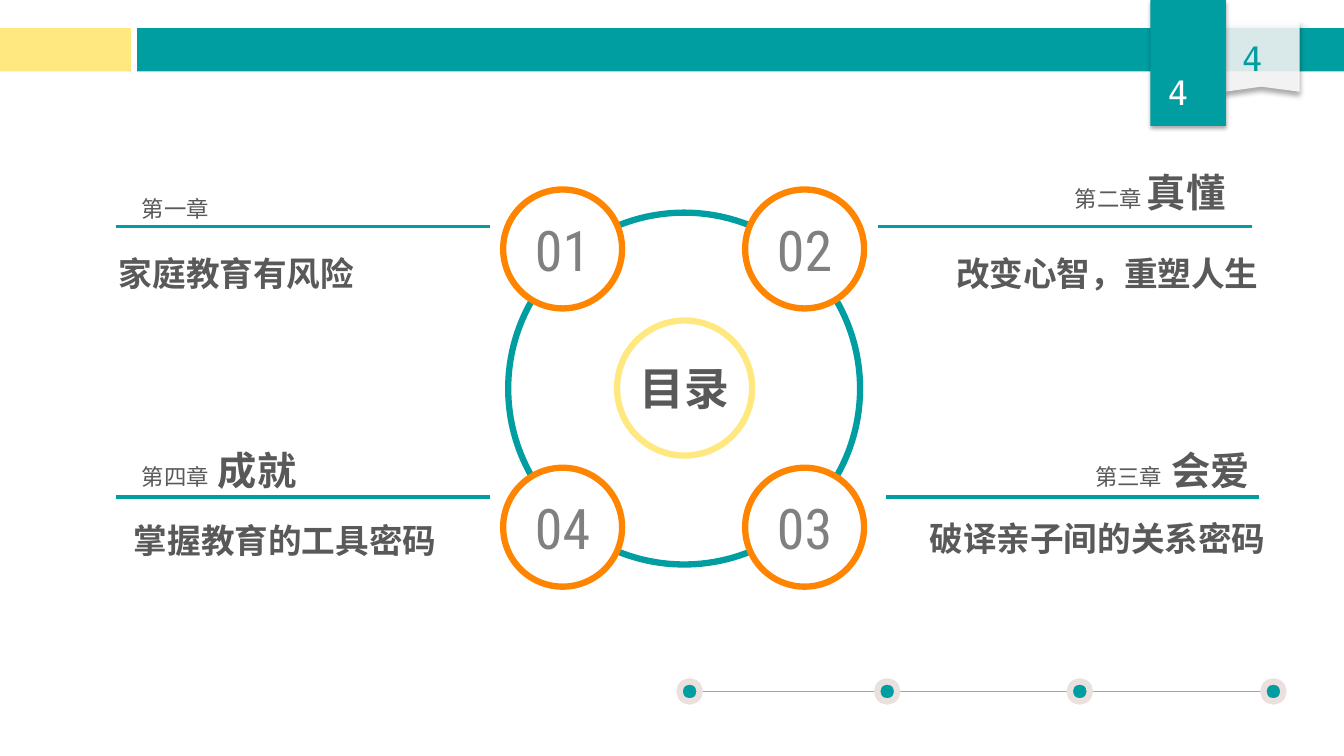
from dataclasses import dataclass
from typing import Optional

from lxml.etree import SubElement
from pptx import Presentation
from pptx.dml.color import RGBColor
from pptx.enum.shapes import MSO_CONNECTOR, MSO_SHAPE
from pptx.enum.text import MSO_ANCHOR, MSO_AUTO_SIZE, PP_ALIGN
from pptx.oxml.ns import qn
from pptx.util import Inches, Pt

TEAL, YELLOW, ORANGE = "009EA1", "FFE880", "FF8500"
WHITE, DARK, GREY = "FFFFFF", "595959", "808080"
CJK, HEADING, DIGITS, MONO = (
    "Noto Sans CJK JP", "Noto Sans CJK SC", "Roboto Condensed", "DejaVu Sans Mono")

Box = tuple[float, float, float, float]


@dataclass
class Run:
    text: str
    size: float
    font: str
    color: str
    bold: bool = False


@dataclass
class Shadow:
    alpha: int
    blur: float
    distance: float


@dataclass
class Chapter:
    number: str
    badge: tuple[float, float]
    rule: tuple[float, float, float]  # left, right, y
    label: str
    title: str
    label_box: Box
    summary: str
    summary_box: Box
    align: PP_ALIGN


LEFT, RIGHT = PP_ALIGN.LEFT, PP_ALIGN.RIGHT
CHAPTERS = [
    Chapter("01", (4.99, 1.88), (1.15, 4.86, 2.25), "第一章", "", (1.31, 1.88, 3.54, 0.37),
            "家庭教育有风险", (1.08, 2.46, 4.25, 0.5), LEFT),
    Chapter("02", (7.39, 1.88), (8.71, 12.42, 2.25), "第二章 ", "真懂", (8.71, 1.62, 3.54, 0.57),
            "改变心智，重塑人生", (8.56, 2.46, 4.02, 0.5), RIGHT),
    Chapter("03", (7.39, 4.64), (8.79, 12.49, 4.93), "第三章", " 会爱", (8.95, 4.38, 3.54, 0.57),
            "破译亲子间的关系密码", (8.63, 5.09, 4.02, 0.5), RIGHT),
    Chapter("04", (4.99, 4.64), (1.15, 4.86, 4.93), "第四章", " 成就", (1.31, 4.38, 3.54, 0.57),
            "掌握教育的工具密码", (1.23, 5.11, 4.02, 0.5), LEFT),
]

SOFT_SHADOW = Shadow(40, 4, 3)
TAB_SHADOW = Shadow(35, 3.1, 1.8)
DOT_LEFTS = (6.74, 8.7, 10.61, 12.53)
DOT_TOP, DOT_SIZE = 6.76, 0.2
BADGE_SIZE = 1.18

prs = Presentation()
prs.slide_width, prs.slide_height = Inches(13.33), Inches(7.5)
slide = prs.slides.add_slide(prs.slide_layouts[6])


def rgb(color: str) -> RGBColor:
    return RGBColor.from_string(color)


def add_alpha(color_element, percent: int) -> None:
    SubElement(color_element, qn("a:alpha"), val=str(percent * 1000))


def style(shape, fill: Optional[str] = None, line: Optional[str] = None, width: float = 4.5,
          opacity: int = 100, shadow: Optional[Shadow] = None) -> None:
    if fill:
        shape.fill.solid()
        shape.fill.fore_color.rgb = rgb(fill)
        if opacity < 100:
            add_alpha(shape.element.spPr.find(qn("a:solidFill"))[0], opacity)
    else:
        shape.fill.background()
    if line:
        shape.line.color.rgb = rgb(line)
        shape.line.width = Pt(width)
    else:
        shape.line.fill.background()
    shape.shadow.inherit = False
    if shadow:
        effects = shape.element.spPr.find(qn("a:effectLst"))
        outer = SubElement(effects, qn("a:outerShdw"), blurRad=str(Pt(shadow.blur)),
                           dist=str(Pt(shadow.distance)), dir="5400000",
                           algn="t", rotWithShape="0")
        add_alpha(SubElement(outer, qn("a:srgbClr"), val="000000"), shadow.alpha)


def add_shape(kind: MSO_SHAPE, box: Box, **look):
    shape = slide.shapes.add_shape(kind, *map(Inches, box))
    style(shape, **look)
    return shape


def write(frame, runs: list[Run], align: PP_ALIGN) -> None:
    paragraph = frame.paragraphs[0]
    paragraph.alignment = align
    for part in runs:
        run = paragraph.add_run()
        run.text = part.text
        run.font.size, run.font.bold = Pt(part.size), part.bold
        run.font.color.rgb = rgb(part.color)
        run.font.name = part.font
        # Chinese characters take their typeface from a:ea
        SubElement(run.font._element, qn("a:ea"), typeface=part.font)


def add_text(box: Box, runs: list[Run], align: PP_ALIGN,
             anchor: MSO_ANCHOR = MSO_ANCHOR.MIDDLE) -> None:
    frame = slide.shapes.add_textbox(*map(Inches, box)).text_frame
    frame.word_wrap = True
    frame.auto_size = MSO_AUTO_SIZE.SHAPE_TO_FIT_TEXT
    frame.vertical_anchor = anchor
    write(frame, runs, align)


def add_circle(left: float, top: float, size: float, outline: str, run: Run) -> None:
    circle = add_shape(MSO_SHAPE.OVAL, (left, top, size, size), fill=WHITE, line=outline)
    frame = circle.text_frame
    frame.margin_left = frame.margin_right = frame.margin_top = frame.margin_bottom = 0
    frame.vertical_anchor = MSO_ANCHOR.MIDDLE
    write(frame, [run], PP_ALIGN.CENTER)


def add_rule(left: float, right: float, y: float, color: str, width: float) -> None:
    rule = slide.shapes.add_connector(
        MSO_CONNECTOR.STRAIGHT, Inches(left), Inches(y), Inches(right), Inches(y))
    rule.line.color.rgb = rgb(color)
    rule.line.width = Pt(width)
    SubElement(rule.element.spPr, qn("a:effectLst"))


def add_page_number(box: Box, color: str) -> None:
    add_text(box, [Run("4 ", 24, MONO, color)], PP_ALIGN.CENTER, MSO_ANCHOR.TOP)


def add_header() -> None:
    add_shape(MSO_SHAPE.RIGHT_TRIANGLE, (12.89, 0.21, 0.12, 0.08),
              fill="F8F8F8", opacity=85, shadow=SOFT_SHADOW)
    add_shape(MSO_SHAPE.RECTANGLE, (0, 0.28, 1.3, 0.43), fill=YELLOW)
    add_shape(MSO_SHAPE.RECTANGLE, (1.36, 0.28, 11.97, 0.43), fill=TEAL)
    builder = slide.shapes.build_freeform(Inches(12.15), Inches(0.91), scale=1.0)
    corners = [(12.15, 0.22), (12.89, 0.22), (12.89, 0.91), (12.51, 0.86)]
    builder.add_line_segments([(Inches(x), Inches(y)) for x, y in corners], close=True)
    style(builder.convert_to_shape(), fill=WHITE, opacity=85, shadow=SOFT_SHADOW)
    add_page_number((12.15, 0.33, 0.74, 0.5), TEAL)
    add_shape(MSO_SHAPE.RECTANGLE, (11.41, 0, 0.75, 1.25), fill=TEAL, shadow=TAB_SHADOW)
    add_page_number((11.41, 0.66, 0.75, 0.5), WHITE)


def add_footer() -> None:
    add_rule(6.89, 12.73, DOT_TOP + DOT_SIZE / 2, "A6A6A6", 1)
    for left in DOT_LEFTS:
        add_shape(MSO_SHAPE.OVAL, (left, DOT_TOP, DOT_SIZE, DOT_SIZE), fill=TEAL, line="EAE0DE")


def add_chapter(chapter: Chapter) -> None:
    add_circle(*chapter.badge, BADGE_SIZE, ORANGE, Run(chapter.number, 40, DIGITS, GREY))
    add_rule(*chapter.rule, TEAL, 2.25)
    heading = [Run(chapter.label, 16, CJK, DARK)]
    if chapter.title:
        heading.append(Run(chapter.title, 28, CJK, DARK, True))
    add_text(chapter.label_box, heading, chapter.align)
    add_text(chapter.summary_box, [Run(chapter.summary, 24, CJK, DARK, True)], chapter.align)


def main() -> None:
    add_footer()
    add_header()
    add_shape(MSO_SHAPE.OVAL, (5.04, 2.11, 3.49, 3.49), line=TEAL)
    add_circle(6.12, 3.18, 1.34, YELLOW, Run("目录", 32, HEADING, DARK, True))
    for chapter in CHAPTERS:
        add_chapter(chapter)
    prs.save("out.pptx")


if __name__ == "__main__":
    main()
